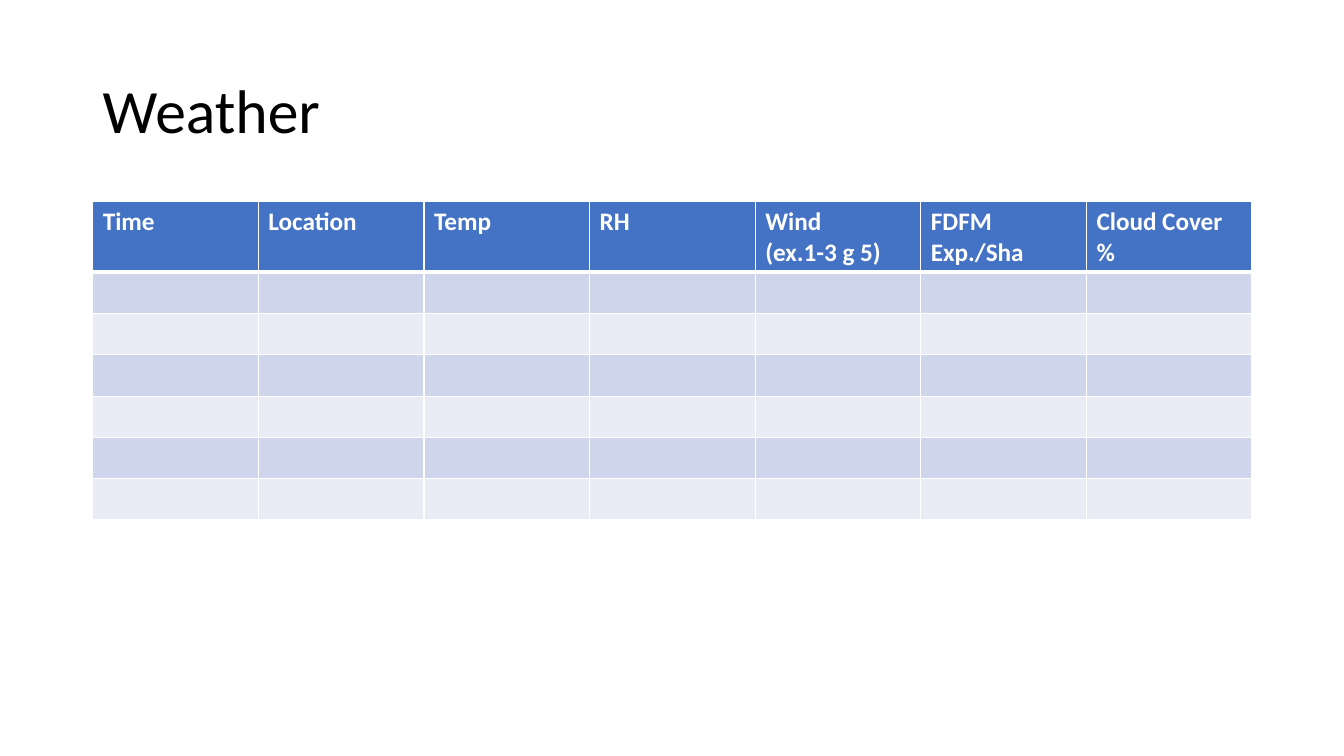
from dataclasses import dataclass

from lxml.etree import SubElement
from pptx import Presentation
from pptx.dml.color import RGBColor
from pptx.enum.text import MSO_ANCHOR
from pptx.oxml.ns import qn
from pptx.util import Inches, Pt

TITLE = "Weather"
HEADERS = ["Time", "Location", "Temp", "RH", "Wind\n(ex.1-3 g 5)", "FDFM\nExp./Sha", "Cloud Cover %"]
EMPTY_ROWS = 6


@dataclass(frozen=True)
class Theme:
    font: str = "Calibri"
    title_size: int = 44
    table_size: int = 18
    black: str = "000000"
    white: str = "FFFFFF"
    header: str = "4472C4"
    bands: tuple = ("CFD5EA", "E9EBF5")
    thin: int = 1
    thick: int = 3


THEME = Theme()
LEFT, WIDTH = 0.92, 11.5
TITLE_TOP, TITLE_HEIGHT = 0.4, 1.45
TABLE_TOP, HEADER_HEIGHT, ROW_HEIGHT = 2, 0.7, 0.41


def style_paragraph(paragraph, size, color, bold=False):
    font = paragraph.font
    font.name = THEME.font
    font.size = Pt(size)
    font.bold = bold
    font.color.rgb = RGBColor.from_string(color)


def add_borders(cell, top, bottom):
    properties = cell._tc.get_or_add_tcPr()
    widths = {"L": THEME.thin, "R": THEME.thin, "T": top, "B": bottom}
    for side, width in widths.items():
        line = SubElement(properties, qn(f"a:ln{side}"), w=str(Pt(width)))
        fill = SubElement(line, qn("a:solidFill"))
        SubElement(fill, qn("a:srgbClr"), val=THEME.white)


def add_title(slide):
    box = slide.shapes.add_textbox(Inches(LEFT), Inches(TITLE_TOP), Inches(WIDTH), Inches(TITLE_HEIGHT))
    frame = box.text_frame
    frame.word_wrap = True
    frame.vertical_anchor = MSO_ANCHOR.MIDDLE
    frame.text = TITLE
    paragraph = frame.paragraphs[0]
    paragraph.line_spacing = 0.9
    style_paragraph(paragraph, THEME.title_size, THEME.black)


def add_weather_table(slide):
    heights = [HEADER_HEIGHT] + [ROW_HEIGHT] * EMPTY_ROWS
    table = slide.shapes.add_table(
        len(heights), len(HEADERS), Inches(LEFT), Inches(TABLE_TOP), Inches(WIDTH), Inches(sum(heights))
    ).table
    for row_index, height in enumerate(heights):
        table.rows[row_index].height = Inches(height)
        is_header = row_index == 0
        color = THEME.header if is_header else THEME.bands[(row_index - 1) % 2]
        top = THEME.thick if row_index == 1 else THEME.thin
        bottom = THEME.thick if is_header else THEME.thin
        for column_index, header in enumerate(HEADERS):
            cell = table.cell(row_index, column_index)
            add_borders(cell, top, bottom)
            cell.fill.solid()
            cell.fill.fore_color.rgb = RGBColor.from_string(color)
            if is_header:
                cell.text = header
            for paragraph in cell.text_frame.paragraphs:
                style_paragraph(paragraph, THEME.table_size, THEME.white if is_header else THEME.black, is_header)


def main():
    presentation = Presentation()
    presentation.slide_width = Inches(13.33)
    presentation.slide_height = Inches(7.5)
    slide = presentation.slides.add_slide(presentation.slide_layouts[6])
    add_title(slide)
    add_weather_table(slide)
    presentation.save("out.pptx")


if __name__ == "__main__":
    main()
